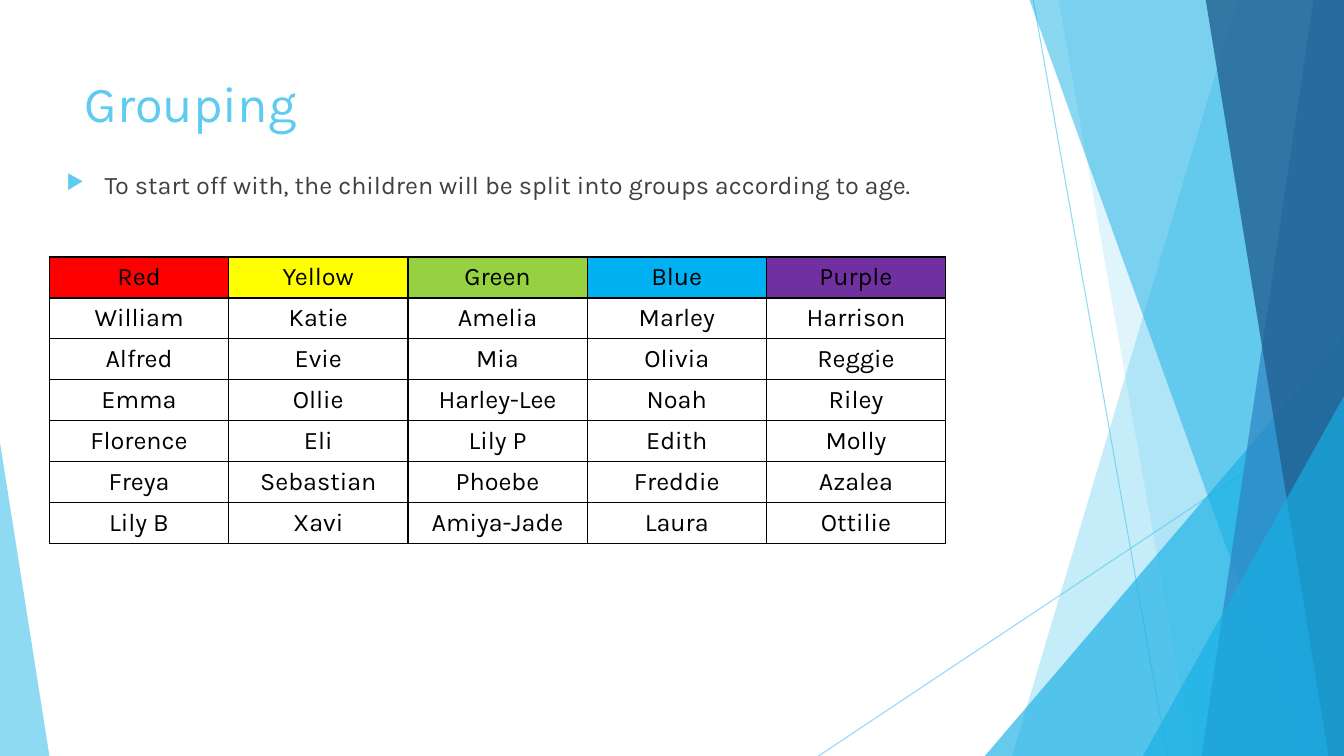
from lxml.etree import SubElement
from pptx import Presentation
from pptx.dml.color import RGBColor
from pptx.enum.shapes import MSO_CONNECTOR as Connector, MSO_SHAPE as Shape
from pptx.enum.text import MSO_ANCHOR as Anchor, PP_ALIGN as Align
from pptx.oxml.ns import qn
from pptx.util import Inches, Pt

COLOURS = {
    "sky": "5FCBEF", "azure": "17B0E4", "blue": "2E83C3", "navy": "226292",
    "body": "404040", "black": "000000",
    "Red": "FF0000", "Yellow": "FFFF00", "Green": "96D141",
    "Blue": "00B0F0", "Purple": "7030A0",
}
GROUPS = {
    "Red": ["William", "Alfred", "Emma", "Florence", "Freya", "Lily B"],
    "Yellow": ["Katie", "Evie", "Ollie", "Eli", "Sebastian", "Xavi"],
    "Green": ["Amelia", "Mia", "Harley-Lee", "Lily P", "Phoebe", "Amiya-Jade"],
    "Blue": ["Marley", "Olivia", "Noah", "Edith", "Freddie", "Laura"],
    "Purple": ["Harrison", "Reggie", "Riley", "Molly", "Azalea", "Ottilie"],
}


def rgb(name):
    return RGBColor.from_string(COLOURS[name])


def add_colour(parent, name):
    SubElement(parent, qn("a:srgbClr"), val=COLOURS[name])


def set_opacity(element, percent):
    for colour in element.iter(qn("a:srgbClr")):
        SubElement(colour, qn("a:alpha"), val=str(percent * 1000))


class GroupingSlide:
    font = "Karla"

    def __init__(self, deck):
        self.width, self.height = deck.slide_width, deck.slide_height
        self.slide = deck.slides.add_slide(deck.slide_layouts[5])
        self.shapes = self.slide.shapes

    def x(self, percent):
        return round(self.width * percent / 100)

    def y(self, percent):
        return round(self.height * percent / 100)

    def box(self, left, top, width, height):
        return self.x(left), self.y(top), self.x(width), self.y(height)

    def add_words(self, paragraph, words, size, colour):
        run = paragraph.add_run()
        run.text = words
        run.font.name = self.font
        run.font.size = Pt(size)
        run.font.bold = False
        run.font.color.rgb = rgb(colour)

    def ray(self, start, end):
        ray = self.shapes.add_connector(
            Connector.STRAIGHT, self.x(start[0]), self.y(start[1]), self.x(end[0]), self.y(end[1]))
        ray.line.color.rgb = rgb("sky")
        ray.line.width = Pt(0.75)
        properties = ray._element.spPr
        set_opacity(properties, 70)
        SubElement(properties, qn("a:effectLst"))

    def paint(self, facet, colour, opacity):
        facet.shadow.inherit = False
        facet.fill.solid()
        facet.fill.fore_color.rgb = rgb(colour)
        facet.line.fill.background()
        set_opacity(facet._element.spPr, opacity)

    def panel(self, top_left, bottom_left, colour, opacity):
        top, bottom, right = self.y(-0.13), self.y(100), self.x(100)
        outline = self.shapes.build_freeform(self.x(top_left), top)
        outline.add_line_segments([(right, top), (right, bottom), (self.x(bottom_left), bottom)])
        self.paint(outline.convert_to_shape(), colour, opacity)

    def wedge(self, left, top, width, apex, colour, opacity):
        wedge = self.shapes.add_shape(Shape.ISOSCELES_TRIANGLE, *self.box(left, top, width, 100 - top))
        wedge.adjustments[0] = apex
        self.paint(wedge, colour, opacity)

    def title(self, words, *place):
        title = self.shapes.title
        title.left, title.top, title.width, title.height = self.box(*place)
        self.shapes._spTree.append(title._element)
        frame = title.text_frame
        frame.word_wrap = True
        frame.vertical_anchor = Anchor.TOP
        heading = frame.paragraphs[0]
        heading.alignment = Align.LEFT
        self.add_words(heading, words, 36, "sky")

    def bullet(self, words, *place):
        frame = self.shapes.add_textbox(*self.box(*place)).text_frame
        frame.word_wrap = True
        point = frame.paragraphs[0]
        properties = point._p.get_or_add_pPr()
        properties.set("marL", str(Inches(0.38)))
        properties.set("indent", str(-Inches(0.38)))
        add_colour(SubElement(properties, qn("a:buClr")), "sky")
        SubElement(properties, qn("a:buSzPct"), val="80000")
        SubElement(properties, qn("a:buChar"), char="▶")
        self.add_words(point, words, 18, "body")

    def cell(self, cell, words, fill=None):
        properties = cell._tc.get_or_add_tcPr()
        for side in ("lnL", "lnR", "lnT", "lnB"):
            border = SubElement(properties, qn(f"a:{side}"), w=str(Pt(1)))
            add_colour(SubElement(border, qn("a:solidFill")), "black")
        if fill:
            cell.fill.solid()
            cell.fill.fore_color.rgb = rgb(fill)
        else:
            cell.fill.background()
        cell.vertical_anchor = Anchor.MIDDLE
        entry = cell.text_frame.paragraphs[0]
        entry.alignment = Align.CENTER
        self.add_words(entry, words, 18, "black")

    def group_table(self, groups, *place):
        row_count = 1 + max(map(len, groups.values()))
        table = self.shapes.add_table(row_count, len(groups), *self.box(*place)).table
        table.first_row = table.horz_banding = False
        for column, (group, children) in enumerate(groups.items()):
            self.cell(table.cell(0, column), group, group)
            for row, child in enumerate(children, 1):
                self.cell(table.cell(row, column), child)


def main():
    deck = Presentation()
    deck.slide_width, deck.slide_height = Inches(13.33), Inches(7.5)
    slide = GroupingSlide(deck)

    slide.ray((76.88, 0), (86.85, 100))
    slide.ray((100, 53.73), (60.9, 100))
    slide.panel(92.1, 75.3, "sky", 36)
    slide.panel(78.75, 88.73, "sky", 20)
    slide.wedge(73.28, 44.4, 26.72, 1, "azure", 66)
    slide.panel(76.58, 96.83, "azure", 50)
    slide.panel(97.73, 89.4, "blue", 70)
    slide.panel(89.7, 98.85, "navy", 80)
    slide.wedge(85.05, 52.4, 14.95, 1, "azure", 66)
    slide.wedge(0, 58.53, 3.68, 0, "sky", 70)

    slide.title("Grouping", 5.55, 8.93, 70.5, 19.2)
    slide.bullet("To start off with, the children will be split into groups according to age.",
                 4.2, 21.73, 70.5, 56.53)
    slide.group_table(GROUPS, 3.68, 34, 66.68, 37.87)
    deck.save("out.pptx")


if __name__ == "__main__":
    main()
